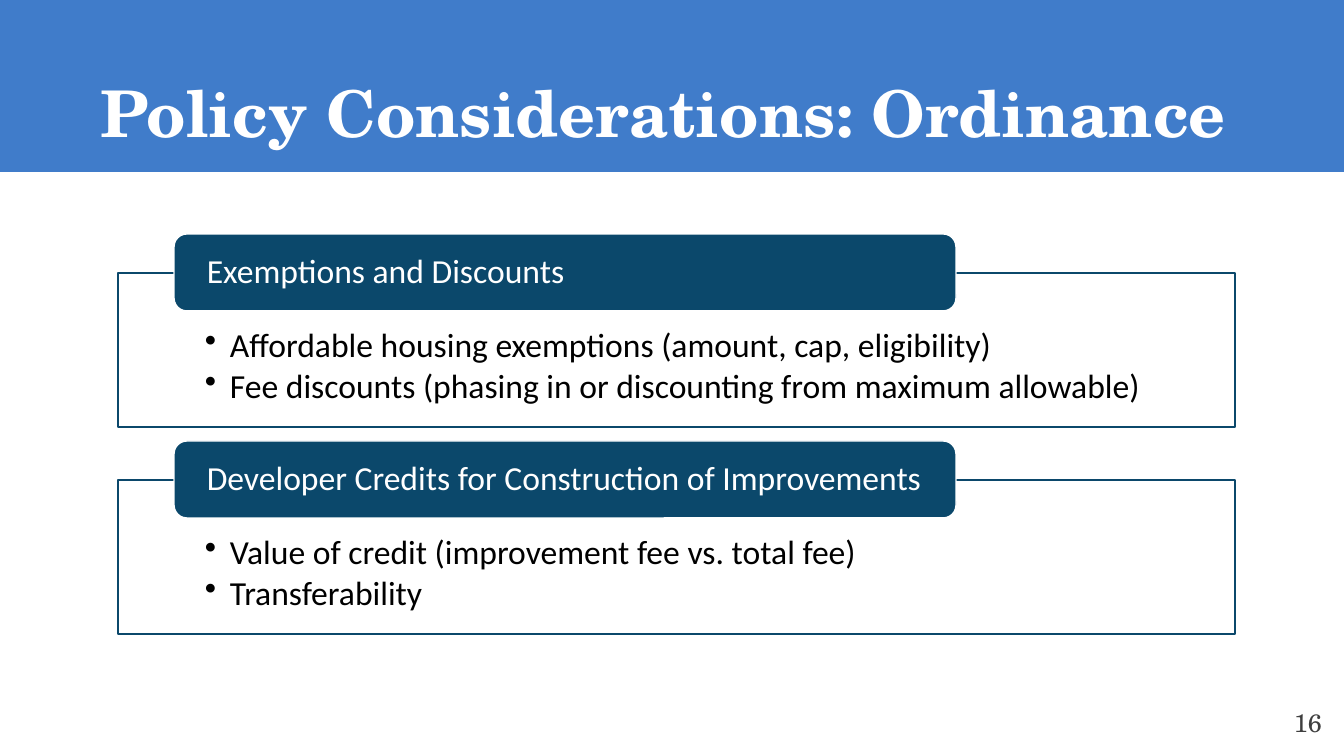
from lxml.etree import SubElement
from pptx import Presentation
from pptx.dml.color import RGBColor
from pptx.enum.shapes import MSO_SHAPE
from pptx.enum.text import MSO_ANCHOR, PP_ALIGN
from pptx.oxml.ns import qn
from pptx.util import Pt

TITLE = "Policy Considerations: Ordinance"
NUMBER = "16"
TOPICS = [
    ("Exemptions and Discounts", [
        "Affordable housing exemptions (amount, cap, eligibility)",
        "Fee discounts (phasing in or discounting from maximum allowable)",
    ]),
    ("Developer Credits for Construction of Improvements", [
        "Value of credit (improvement fee vs. total fee)",
        "Transferability",
    ]),
]
SERIF, SANS = "TeX Gyre Schola", "Calibri"
BLUE, NAVY, WHITE, BLACK, GRAY = "407CCA", "0B486B", "FFFFFF", "000000", "3F3F3F"
TOP, STEP, DROP = 234, 207, 39


def px(n):
    """Turn pixels into EMU."""
    return round(n * 914400 / 100.8)


def tint(text):
    """Turn a hex string into a colour."""
    return RGBColor.from_string(text)


def style(para, size, face, color, bold=False):
    """Format the runs of a paragraph."""
    for run in para.runs:
        font = run.font
        font.size, font.name, font.bold = Pt(size), face, bold
        font.color.rgb = tint(color)


def block(slide, kind, area, fill, line):
    """Add a filled shape with a thin outline."""
    shape = slide.shapes.add_shape(kind, *map(px, area))
    shape.shadow.inherit = False
    shape.fill.solid()
    shape.fill.fore_color.rgb = tint(fill)
    shape.line.color.rgb = tint(line)
    shape.line.width = Pt(1)
    return shape


def write(shape, lines, color, insets, anchor, after, dots=False):
    """Put left-aligned lines, bulleted or plain, into a shape."""
    frame = shape.text_frame
    frame.word_wrap = True
    frame.vertical_anchor = anchor
    (frame.margin_left, frame.margin_top,
     frame.margin_right, frame.margin_bottom) = map(px, insets)
    frame.text = "\n".join(lines)
    for para in frame.paragraphs:
        if dots:
            props = para._p.get_or_add_pPr()
            props.set("marL", str(px(25)))
            props.set("indent", str(px(-25)))
            SubElement(props, qn("a:buChar")).set("char", "•")
        para.alignment = PP_ALIGN.LEFT
        para.line_spacing = 0.9
        para.space_after = Pt(after)
        style(para, 24, SANS, color)


def topic(slide, top, head, points):
    """Draw an outlined panel with its heading tab."""
    panel = block(slide, MSO_SHAPE.RECTANGLE, (118, top + DROP, 1117, 154), WHITE, NAVY)
    shade = panel.fill._xPr.find(qn("a:solidFill"))[0]
    SubElement(shade, qn("a:alpha")).set("val", "90000")
    write(panel, points, BLACK, (87, 55, 87, 19), MSO_ANCHOR.TOP, 3.6, True)
    tab = block(slide, MSO_SHAPE.ROUNDED_RECTANGLE, (174, top, 782, 77), NAVY, WHITE)
    write(tab, [head], WHITE, (29, 0, 20, 0), MSO_ANCHOR.MIDDLE, 0)


def main():
    """Build and save the slide."""
    deck = Presentation()
    deck.slide_width, deck.slide_height = px(1344), px(756)
    slide = deck.slides.add_slide(deck.slide_layouts[5])

    band = block(slide, MSO_SHAPE.RECTANGLE, (0, 0, 1344, 171), BLUE, BLUE)
    slide.shapes._spTree.insert(2, band._element)

    title = slide.shapes.title
    title.left, title.top, title.width, title.height = map(px, (90, 68, 1204, 145))
    title.text_frame.text = TITLE
    title.text_frame.vertical_anchor = MSO_ANCHOR.TOP
    title.text_frame.paragraphs[0].alignment = PP_ALIGN.LEFT
    style(title.text_frame.paragraphs[0], 46, SERIF, WHITE, True)

    for i, (head, points) in enumerate(TOPICS):
        topic(slide, TOP + i * STEP, head, points)

    page = slide.shapes.add_textbox(*map(px, (1272, 702, 72, 40))).text_frame
    page.word_wrap = True
    page.text = NUMBER
    page.paragraphs[0].alignment = PP_ALIGN.CENTER
    style(page.paragraphs[0], 18, SERIF, GRAY)

    deck.save("out.pptx")


if __name__ == "__main__":
    main()
